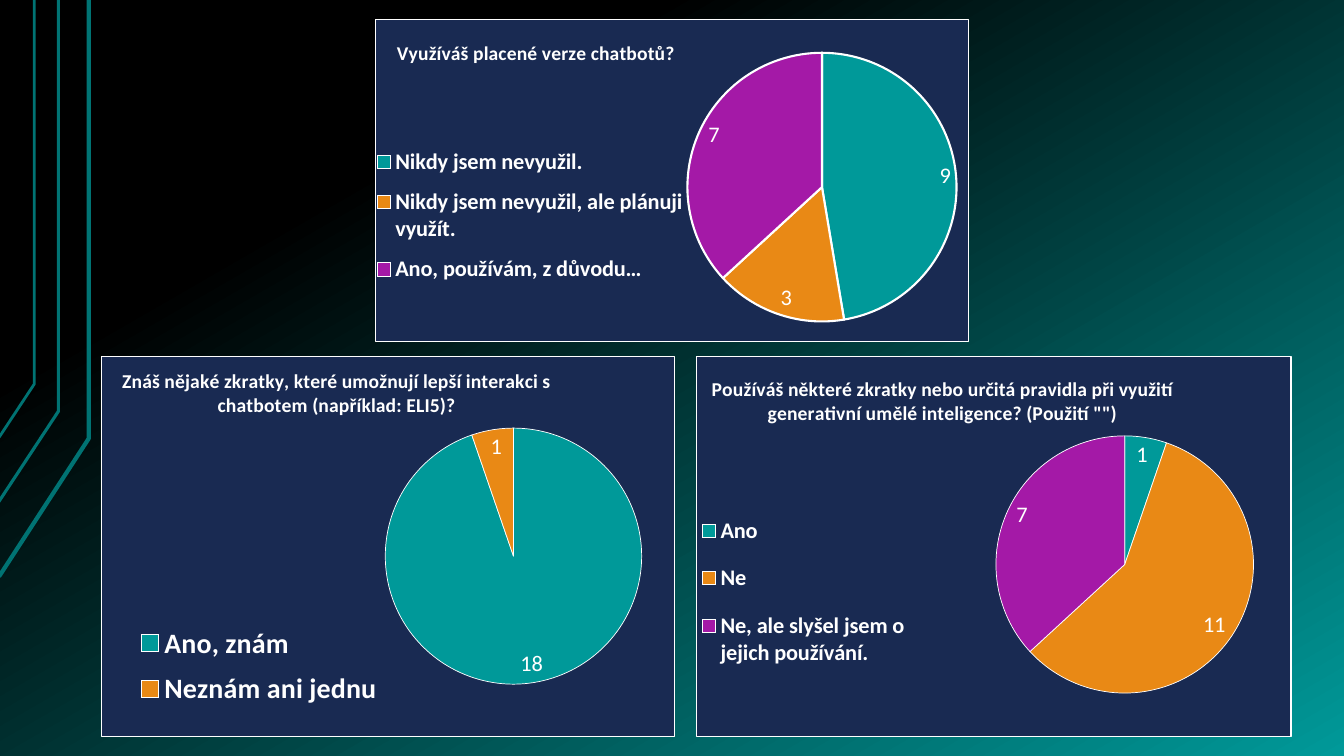
"""Build a slide with three pie charts of survey answers about chatbots."""
from lxml.etree import SubElement
from pptx import Presentation
from pptx.chart.data import CategoryChartData
from pptx.dml.color import RGBColor
from pptx.enum.chart import XL_CHART_TYPE as ChartType
from pptx.enum.chart import XL_LABEL_POSITION as LabelPosition
from pptx.enum.chart import XL_LEGEND_POSITION as LegendPosition
from pptx.oxml import parse_xml
from pptx.oxml.ns import nsdecls, qn
from pptx.util import Inches, Pt

BLACK = RGBColor(0x00, 0x00, 0x00)
WHITE = RGBColor(0xFF, 0xFF, 0xFF)
NAVY = RGBColor(0x19, 0x2A, 0x52)
TEAL = RGBColor(0x00, 0x99, 0x99)
DARK_TEAL = RGBColor(0x00, 0x73, 0x73)
ORANGE = RGBColor(0xE9, 0x89, 0x15)
PURPLE = RGBColor(0xA4, 0x19, 0xA7)
SLICE_COLORS = (TEAL, ORANGE, PURPLE)


def style_font(font, size, bold=False):
    font.name = "Calibri"
    font.size = Pt(size)
    font.bold = bold
    font.color.rgb = WHITE


def place(element, left, top, width=None, height=None, inner=False):
    for old in element.findall(qn("c:layout")):
        element.remove(old)
    layout = parse_xml(f"<c:layout {nsdecls('c')}><c:manualLayout/></c:layout>")
    settings = [("layoutTarget", "inner")] if inner else []
    settings += [("xMode", "edge"), ("yMode", "edge"), ("x", left), ("y", top)]
    if width:
        settings += [("w", width), ("h", height)]
    for tag, value in settings:
        SubElement(layout[0], qn(f"c:{tag}")).set("val", str(value))
    before = [child for child in element
              if child.tag in (qn("c:tx"), qn("c:legendPos"), qn("c:legendEntry"))]
    element.insert(len(before), layout)


deck = Presentation()
deck.slide_width = Inches(13.33)
deck.slide_height = Inches(7.5)
page = deck.slides.add_slide(deck.slide_layouts[6])

backdrop = page.background.fill
backdrop.gradient()
backdrop.gradient_angle = 300
for stop, position, color in zip(backdrop.gradient_stops, (0.25, 1), (BLACK, TEAL)):
    stop.position = position
    stop.color.rgb = color

bent_lines = [
    ((-0.01, 5.72), (0.88, 4.35), 3),
    ((-0.02, 4.99), (0.58, 4.08), 2.25),
    ((-0.01, 4.34), (0.34, 3.81), 2),
]
for start, bend, weight in bent_lines:
    builder = page.shapes.build_freeform(Inches(start[0]), Inches(start[1]))
    corners = [(Inches(x), Inches(y)) for x, y in (bend, (bend[0], 0))]
    builder.add_line_segments(corners, close=False)
    bent_line = builder.convert_to_shape()
    bent_line.shadow.inherit = False
    bent_line.fill.background()
    bent_line.line.color.rgb = DARK_TEAL
    bent_line.line.width = Pt(weight)

surveys = [
    dict(
        box=(1, 3.53, 5.7, 3.78),
        title="Znáš nějaké zkratky, které umožnují lepší interakci s chatbotem (například: ELI5)?",
        answers={"Ano, znám": 18, "Neznám ani jednu": 1},
        title_at=(0.03, 0.02), legend_at=(0.05, 0.68, 0.45, 0.27), legend_size=20,
        pie_at=(0.495, 0.17, 0.447, 0.712), outline=0.5,
    ),
    dict(
        box=(6.9, 3.53, 5.91, 3.78),
        title="Používáš některé zkratky nebo určitá pravidla při využití "
              "generativní umělé inteligence? (Použití \"\")",
        answers={"Ano": 1, "Ne": 11, "Ne, ale slyšel jsem o jejich používání.": 7},
        title_at=(0.02, 0.04), legend_at=(0, 0.37, 0.36, 0.5), legend_size=16,
        pie_at=(0.504, 0.209, 0.433, 0.678), outline=0.5,
    ),
    dict(
        box=(3.72, 0.19, 5.89, 3.2),
        title="Využíváš placené verze chatbotů?",
        answers={"Nikdy jsem nevyužil.": 9,
                 "Nikdy jsem nevyužil, ale plánuji využít.": 3,
                 "Ano, používám, z důvodu…": 7},
        title_at=(0.03, 0.05), legend_at=(0, 0.36, 0.52, 0.5), legend_size=16,
        pie_at=(0.526, 0.078, 0.454, 0.886), outline=1.5,
    ),
]
for survey in surveys:
    answers = survey["answers"]
    chart_data = CategoryChartData()
    chart_data.categories = list(answers)
    chart_data.add_series("Series 1", list(answers.values()))
    box = [Inches(length) for length in survey["box"]]
    chart = page.shapes.add_chart(ChartType.PIE, *box, chart_data).chart
    style_font(chart.font, 10)

    chart.has_title = True
    span = chart.chart_title.text_frame.paragraphs[0].add_run()
    span.text = survey["title"]
    style_font(span.font, 14, bold=True)
    place(chart.chart_title._element, *survey["title_at"])

    chart.has_legend = True
    chart.legend.position = LegendPosition.BOTTOM
    chart.legend.include_in_layout = False
    style_font(chart.legend.font, survey["legend_size"], bold=True)
    place(chart.legend._element, *survey["legend_at"])

    plot = chart.plots[0]
    plot.vary_by_categories = True
    place(chart._chartSpace.chart.plotArea, *survey["pie_at"], inner=True)
    for index, color in enumerate(SLICE_COLORS[:len(answers)]):
        piece = plot.series[0].points[index].format
        piece.fill.solid()
        piece.fill.fore_color.rgb = color
        piece.line.color.rgb = WHITE
        piece.line.width = Pt(survey["outline"])

    labels = plot.series[0].data_labels
    labels.show_value = True
    labels.position = LabelPosition.BEST_FIT
    style_font(labels.font, 16)

    panel = parse_xml(
        f'<c:spPr {nsdecls("c", "a")}><a:solidFill><a:srgbClr val="{NAVY}"/></a:solidFill>'
        f'<a:ln w="{Pt(0.75)}"><a:solidFill><a:srgbClr val="{WHITE}"/></a:solidFill></a:ln></c:spPr>')
    chart._chartSpace.chart.addnext(panel)

deck.save("out.pptx")
